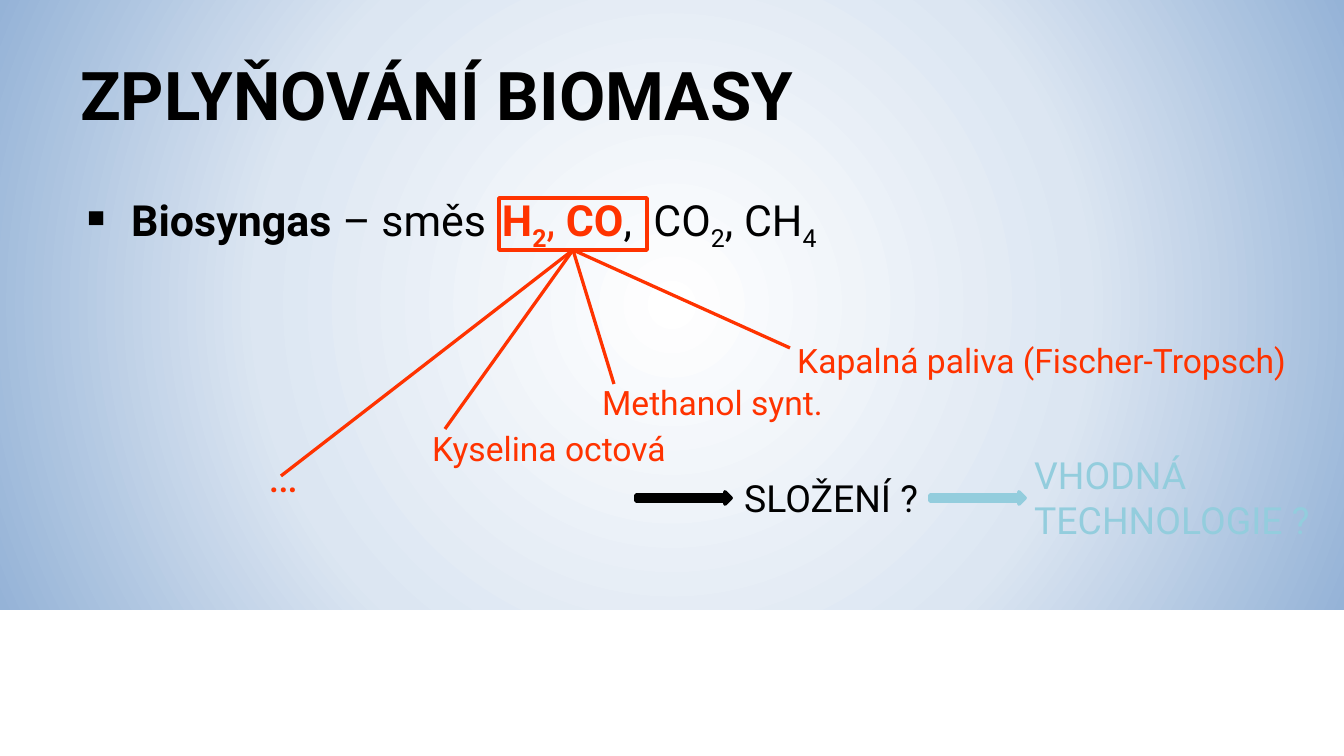
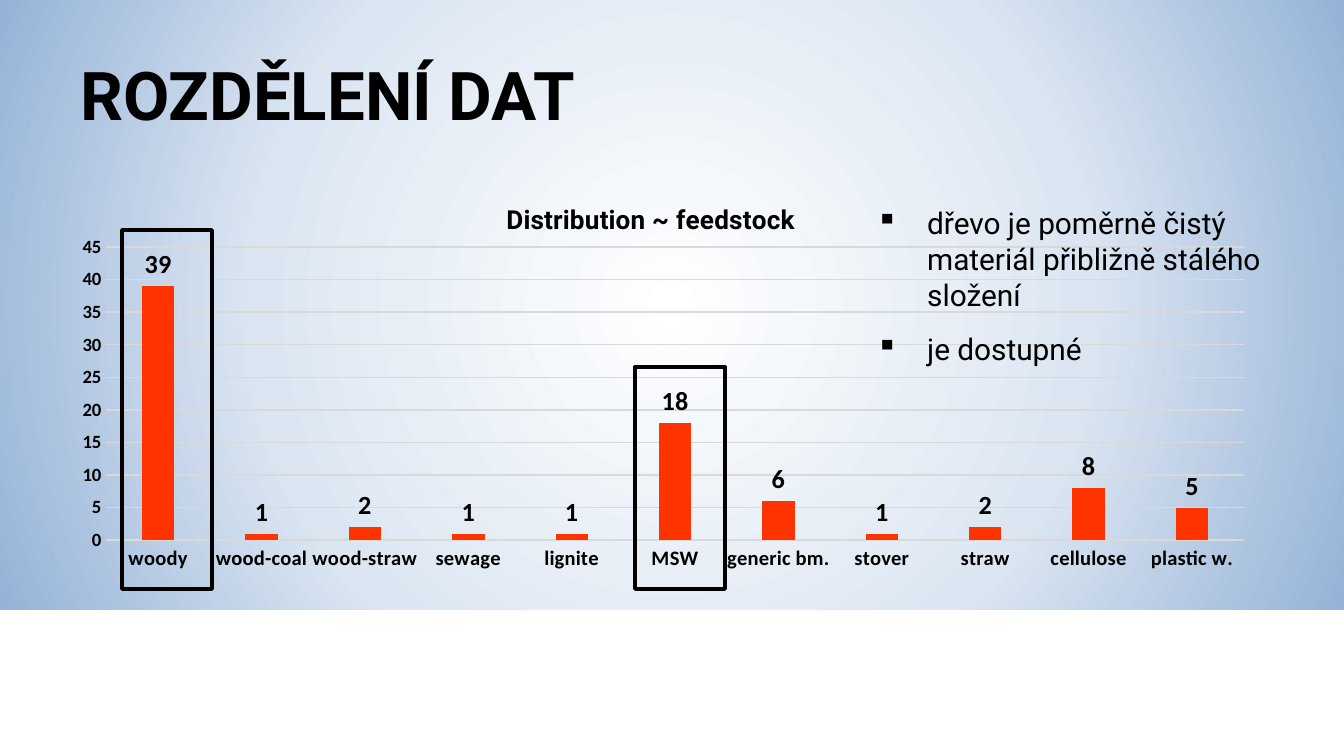
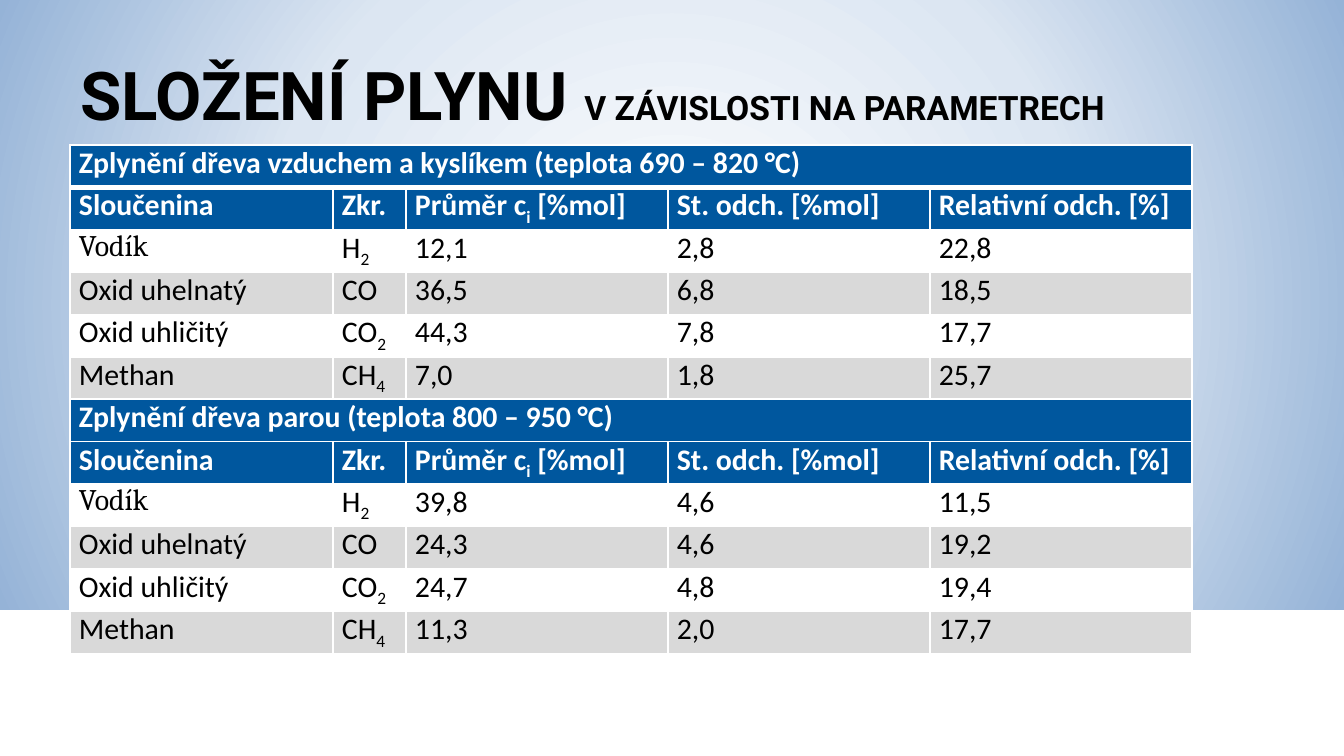
from dataclasses import dataclass

from lxml.etree import SubElement
from pptx import Presentation
from pptx.chart.data import CategoryChartData
from pptx.dml.color import RGBColor
from pptx.enum.chart import XL_CHART_TYPE, XL_LABEL_POSITION, XL_TICK_MARK
from pptx.enum.shapes import MSO_CONNECTOR, MSO_SHAPE
from pptx.enum.text import MSO_ANCHOR, PP_ALIGN
from pptx.oxml import parse_xml
from pptx.oxml.ns import nsdecls, qn
from pptx.util import Emu, Pt

SLIDE_W, SLIDE_H = 1344, 756
BOTTOM_CENTRE = 2


def px(length):
    return Emu(round(length * 914400 / 134.4))


@dataclass(frozen=True)
class Theme:
    black: str = "000000"
    white: str = "FFFFFF"
    accent: str = "FF3300"
    aqua: str = "93CDDD"
    header: str = "00579E"
    band: str = "D9D9D9"
    glow: tuple = ((0, "FFFFFF"), (56, "DCE6F2"), (100, "95B3D7"))
    text_font: str = "Roboto"
    data_font: str = "Calibri"
    first_compound_font: str = "Cambria"
    title: int = 36
    body: int = 23
    dots: int = 24
    step: int = 20
    label: int = 18
    note: int = 16
    chart_title: int = 14
    category: int = 11
    tick: int = 10


THEME = Theme()


def set_font(font, size=None, color=None, bold=None, name=None):
    if size is not None:
        font.size = Pt(size)
    if color is not None:
        font.color.rgb = RGBColor.from_string(color)
    if bold is not None:
        font.bold = bold
    if name is not None:
        font.name = name


def add_runs(paragraph, text, spacing=None, **style):
    """Write text; the character after each underscore is a subscript."""
    first, *rest = text.split("_")
    pieces = [(first, False)]
    for part in rest:
        pieces += [(part[0], True), (part[1:], False)]
    for piece, lowered in pieces:
        if not piece:
            continue
        run = paragraph.add_run()
        run.text = piece
        set_font(run.font, **style)
        if lowered:
            run._r.get_or_add_rPr().set("baseline", "-25000")
        if spacing:
            run._r.get_or_add_rPr().set("spc", str(spacing))


class Deck:
    def __init__(self, theme):
        self.theme = theme
        self.prs = Presentation()
        self.prs.slide_width, self.prs.slide_height = px(SLIDE_W), px(SLIDE_H)
        self.slide = None

    def new_slide(self, title):
        self.slide = self.prs.slides.add_slide(self.prs.slide_layouts[6])
        self.backdrop()
        self.text((67, 31, 1210, 126), [title], self.theme.title,
                  bold=True, anchor=MSO_ANCHOR.MIDDLE)

    def backdrop(self):
        band = self.shape(MSO_SHAPE.RECTANGLE, (0, 0, SLIDE_W, 610))
        stops = "".join(
            f'<a:gs pos="{pos * 1000}"><a:srgbClr val="{color}"/></a:gs>'
            for pos, color in self.theme.glow)
        gradient = parse_xml(
            f'<a:gradFill {nsdecls("a")} rotWithShape="1"><a:gsLst>{stops}</a:gsLst>'
            '<a:path path="circle"><a:fillToRect l="50000" t="50000" r="50000" b="50000"/>'
            '</a:path></a:gradFill>')
        properties = band._element.spPr
        properties.replace(properties.find(qn("a:noFill")), gradient)

    def shape(self, kind, box, fill=None, line=None):
        shape = self.slide.shapes.add_shape(kind, *map(px, box))
        shape.shadow.inherit = False
        if fill:
            shape.fill.solid()
            shape.fill.fore_color.rgb = RGBColor.from_string(fill)
        else:
            shape.fill.background()
        if line:
            shape.line.color.rgb = RGBColor.from_string(line)
            shape.line.width = Pt(2)
        else:
            shape.line.fill.background()
        return shape

    def frame(self, box, color):
        return self.shape(MSO_SHAPE.RECTANGLE, box, line=color)

    def arrow(self, left, top, color):
        self.shape(MSO_SHAPE.RIGHT_ARROW, (left, top, 95, 12), color, color)

    def ray(self, source, end):
        ray = self.slide.shapes.add_connector(
            MSO_CONNECTOR.STRAIGHT, 0, 0, *map(px, end))
        ray.begin_connect(source, BOTTOM_CENTRE)
        ray.line.color.rgb = RGBColor.from_string(self.theme.accent)
        ray.line.width = Pt(1.75)
        SubElement(ray._element.spPr, qn("a:effectLst"))

    def text(self, box, paragraphs, size, color=None, bold=False,
             bullets=False, anchor=MSO_ANCHOR.TOP):
        """Each paragraph is a string or a list of (text, run style) pairs."""
        frame = self.slide.shapes.add_textbox(*map(px, box)).text_frame
        frame.word_wrap = True
        frame.vertical_anchor = anchor
        for index, content in enumerate(paragraphs):
            paragraph = frame.add_paragraph() if index else frame.paragraphs[0]
            if index:
                paragraph.space_before = Pt(10)
            if bullets:
                props = paragraph._p.get_or_add_pPr()
                props.set("marL", str(px(51)))
                props.set("indent", str(-px(51)))
                SubElement(props, qn("a:buChar"), char="▪")
            set_font(paragraph.font, size, color or self.theme.black, bold,
                     self.theme.text_font)
            runs = [(content, {})] if isinstance(content, str) else content
            for words, style in runs:
                add_runs(paragraph, words, **style)

    def column_chart(self, box, title, categories, values):
        theme = self.theme
        data = CategoryChartData()
        data.categories = categories
        data.add_series("Series 1", values)
        chart = self.slide.shapes.add_chart(
            XL_CHART_TYPE.COLUMN_CLUSTERED, *map(px, box), data).chart
        set_font(chart.font, theme.tick, theme.black, name=theme.data_font)
        chart.has_legend = False
        chart.has_title = True
        heading = chart.chart_title.text_frame.paragraphs[0]
        set_font(heading.font, theme.chart_title, theme.black, True, theme.text_font)
        add_runs(heading, title)

        # Columns and their values
        plot = chart.plots[0]
        plot.gap_width, plot.overlap = 219, -27
        plot.vary_by_categories = False
        fill = plot.series[0].format.fill
        fill.solid()
        fill.fore_color.rgb = RGBColor.from_string(theme.accent)
        plot.has_data_labels = True
        labels = plot.data_labels
        labels.show_value = True
        labels.position = XL_LABEL_POSITION.OUTSIDE_END
        set_font(labels.font, theme.chart_title, theme.black, True, theme.data_font)

        # Axes
        counts, kinds = chart.value_axis, chart.category_axis
        for axis, size in ((counts, theme.tick), (kinds, theme.category)):
            axis.major_tick_mark = axis.minor_tick_mark = XL_TICK_MARK.NONE
            set_font(axis.tick_labels.font, size, theme.black, True, theme.data_font)
        counts.minimum_scale, counts.maximum_scale, counts.major_unit = 0, 45, 5
        counts.format.line.fill.background()
        for line in (counts.major_gridlines.format.line, kinds.format.line):
            line.color.rgb = RGBColor.from_string(theme.band)
            line.width = Pt(0.75)

        # Fixed plot area
        area = chart.element.find(".//" + qn("c:plotArea"))
        for old in area.findall(qn("c:layout")):
            area.remove(old)
        layout = parse_xml(f'<c:layout {nsdecls("c")}/>')
        manual = SubElement(layout, qn("c:manualLayout"))
        for tag, value in (("layoutTarget", "inner"), ("xMode", "edge"),
                           ("yMode", "edge"), ("x", "0.05"), ("y", "0.16"),
                           ("w", "0.94"), ("h", "0.71")):
            SubElement(manual, qn("c:" + tag), val=value)
        area.insert(0, layout)

    def cell(self, cell, text, fill, color, bold, font, top=1, bottom=1):
        props = cell._tc.get_or_add_tcPr()
        for side, width in (("L", 1), ("R", 1), ("T", top), ("B", bottom)):
            edge = SubElement(props, qn("a:ln" + side), w=str(Pt(width)))
            SubElement(SubElement(edge, qn("a:solidFill")), qn("a:srgbClr"),
                       val=self.theme.white)
        cell.fill.solid()
        cell.fill.fore_color.rgb = RGBColor.from_string(fill)
        cell.margin_left = cell.margin_right = px(9)
        cell.margin_top = cell.margin_bottom = 0
        paragraph = cell.text_frame.paragraphs[0]
        paragraph.alignment = PP_ALIGN.JUSTIFY
        paragraph.space_after = Pt(6)
        set_font(paragraph.font, self.theme.note, color, bold, font)
        add_runs(paragraph, text)

    def gas_table(self, left, top, widths, height, headings, compounds, sections):
        theme = self.theme
        block = len(compounds) + 2
        count = block * len(sections)
        table = self.slide.shapes.add_table(
            count, len(widths), px(left), px(top), px(sum(widths)), px(height)).table
        for column, width in zip(table.columns, widths):
            column.width = px(width)
        for row in table.rows:
            row.height = px(height / count)

        for section, (caption, measures) in enumerate(sections):
            start = section * block
            rows = [[caption] + [""] * (len(widths) - 1), headings]
            rows += [[*names, *values] for names, values in zip(compounds, measures)]
            for offset, texts in enumerate(rows):
                heading = offset < 2
                fill = theme.header if heading else (theme.white, theme.band)[offset % 2]
                for col, text in enumerate(texts):
                    first_name = offset == 2 and col == 0
                    self.cell(
                        table.cell(start + offset, col), text, fill,
                        theme.white if heading else theme.black, heading,
                        theme.first_compound_font if first_name else theme.data_font,
                        top=3 if start + offset == 1 else 1,
                        bottom=3 if start + offset == 0 else 1)
            table.cell(start, 0).merge(table.cell(start, len(widths) - 1))


def gasification(deck):
    theme = deck.theme
    deck.new_slide("ZPLYŇOVÁNÍ BIOMASY")
    key_gas = {"color": theme.accent, "bold": True}
    deck.text((67, 187, 1210, 402), [[
        ("Biosyngas", {"bold": True}),
        (" – směs", {}),
        (" ", {"spacing": 260}),
        ("H_2", key_gas),
        (", ", {"color": theme.accent}),
        ("CO", key_gas),
        (",", {}),
        (" ", {"spacing": 570}),
        ("CO_2, CH_4", {}),
    ]], theme.body, bullets=True)

    # Products made from the framed gases
    key_gases = deck.frame((499, 198, 148, 52), theme.accent)
    products = (
        ("…", theme.dots, (255, 441, 452, 67), (281, 476)),
        ("Kyselina octová", theme.label, (419, 421, 312, 54), (445, 429)),
        ("Methanol synt.", theme.label, (589, 375, 269, 54), (614, 384)),
        ("Kapalná paliva (Fischer-Tropsch)", theme.label, (784, 333, 560, 54), (790, 348)),
    )
    for product, size, box, ray_end in products:
        deck.ray(key_gases, ray_end)
        deck.text(box, [product], size, theme.accent)

    # From composition to technology
    deck.arrow(636, 492, theme.black)
    deck.text((731, 469, 223, 59), ["SLOŽENÍ ?"], theme.step)
    deck.arrow(930, 492, theme.aqua)
    deck.text((1021, 446, 323, 103), ["VHODNÁ TECHNOLOGIE ?"], theme.step, theme.aqua)


def data_distribution(deck):
    deck.new_slide("ROZDĚLENÍ DAT")
    feedstocks = {
        "woody": 39, "wood-coal": 1, "wood-straw": 2, "sewage": 1, "lignite": 1,
        "MSW": 18, "generic bm.": 6, "stover": 1, "straw": 2, "cellulose": 8,
        "plastic w.": 5,
    }
    deck.column_chart((46, 181, 1210, 413), "Distribution ~ feedstock",
                      list(feedstocks), list(feedstocks.values()))

    # Highlighted feedstocks
    for left, top in ((122, 230), (635, 367)):
        deck.frame((left, top, 90, 589 - top), deck.theme.black)
    deck.text((863, 198, 456, 265), [
        "dřevo je poměrně čistý materiál přibližně stálého složení",
        "je dostupné",
    ], deck.theme.note, bullets=True)


def gas_composition(deck):
    deck.new_slide([
        ("SLOŽENÍ PLYNU ", {}),
        ("V ZÁVISLOSTI NA PARAMETRECH", {"size": deck.theme.label}),
    ])
    deck.gas_table(
        70, 145, (263, 73, 262, 262, 262), 509,
        headings=["Sloučenina", "Zkr.", "Průměr c_i [%mol]", "St. odch. [%mol]",
                  "Relativní odch. [%]"],
        compounds=[("Vodík", "H_2"), ("Oxid uhelnatý", "CO"),
                   ("Oxid uhličitý", "CO_2"), ("Methan", "CH_4")],
        sections=[
            ("Zplynění dřeva vzduchem a kyslíkem (teplota 690 – 820 °C)",
             [("12,1", "2,8", "22,8"), ("36,5", "6,8", "18,5"),
              ("44,3", "7,8", "17,7"), ("7,0", "1,8", "25,7")]),
            ("Zplynění dřeva parou (teplota 800 – 950 °C)",
             [("39,8", "4,6", "11,5"), ("24,3", "4,6", "19,2"),
              ("24,7", "4,8", "19,4"), ("11,3", "2,0", "17,7")]),
        ])


def main():
    deck = Deck(THEME)
    gasification(deck)
    data_distribution(deck)
    gas_composition(deck)
    deck.prs.save("out.pptx")


if __name__ == "__main__":
    main()
